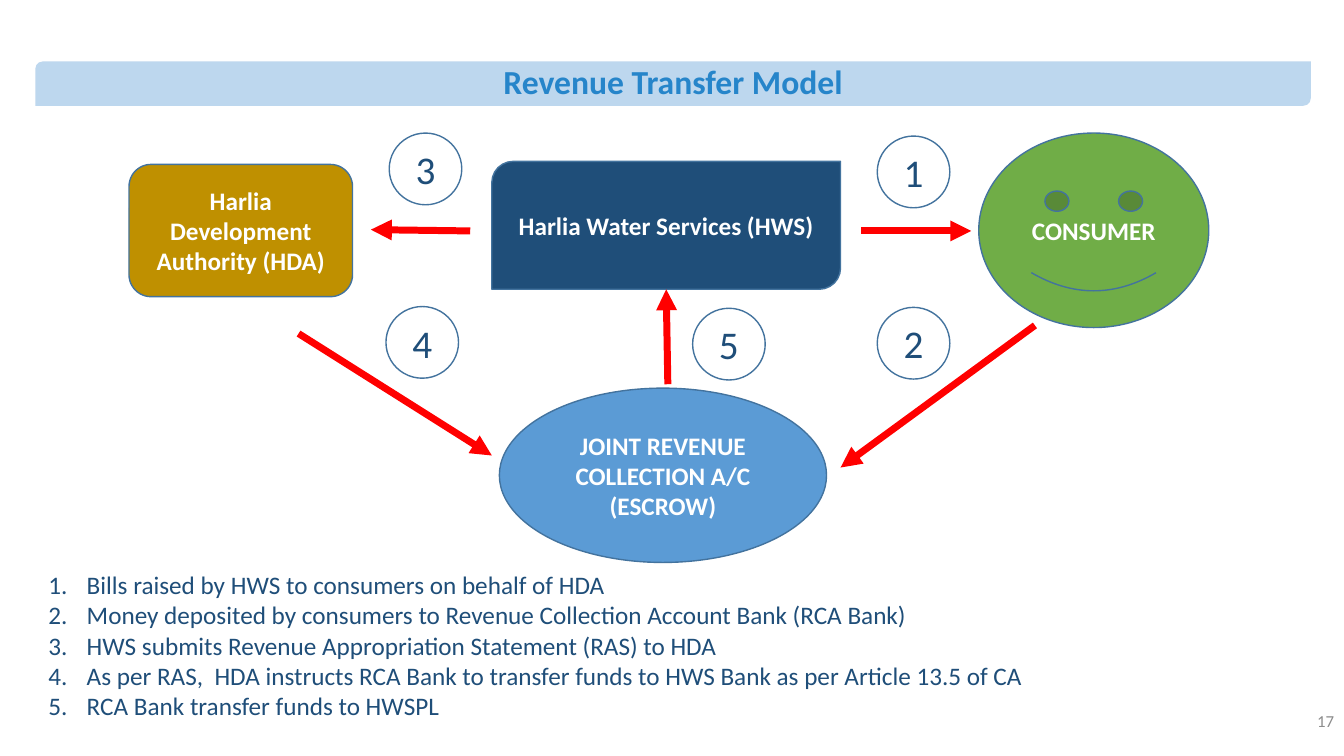
from dataclasses import dataclass

from lxml import etree
from pptx import Presentation
from pptx import util as u
from pptx.dml.color import RGBColor
from pptx.enum import shapes, text
from pptx.oxml.ns import qn

NAVY = RGBColor(0x1F, 0x4E, 0x79)
TITLE_BLUE = RGBColor(0x26, 0x85, 0xCA)
PALE_BLUE = RGBColor(0xBD, 0xD7, 0xEE)
ESCROW_BLUE = RGBColor(0x5B, 0x9B, 0xD5)
OUTLINE = RGBColor(0x43, 0x73, 0x9E)
GOLD = RGBColor(0xBF, 0x90, 0x00)
GREEN = RGBColor(0x70, 0xAD, 0x47)
RED = RGBColor(0xFF, 0x00, 0x00)
GREY = RGBColor(0x8C, 0x8C, 0x8C)
WHITE = RGBColor(0xFF, 0xFF, 0xFF)
FONT = "Calibri"
SHAPE = shapes.MSO_SHAPE
ALIGN = text.PP_ALIGN

PARTIES = [
    ("escrow", SHAPE.OVAL, ESCROW_BLUE, (34.3, 59.4, 30.3, 40.6),
     ["JOINT REVENUE COLLECTION A/C", "(ESCROW)"]),
    ("authority", SHAPE.ROUNDED_RECTANGLE, GOLD, (0, 7.3, 20.7, 30.8),
     ["Harlia Development Authority (HDA)"]),
    ("services", SHAPE.ROUND_2_DIAG_RECTANGLE, NAVY, (33.6, 6.6, 32.3, 29.8),
     ["Harlia Water Services (HWS)"]),
    ("consumer", SHAPE.SMILEY_FACE, GREEN, (78.7, 0, 21.3, 45.3), ["CONSUMER"]),
]
FLOWS = [
    ("1", (69.3, 0.7), (67.8, 22.8), (78, 22.8), None),
    ("2", (69.3, 40.6), (83.9, 44.8), (65.9, 77.9), None),
    ("3", (24.1, 0), (31.6, 22.8), (22.4, 22.5), None),
    ("4", (23.8, 40.4), (15.7, 46.7), (33.6, 75.1), None),
    ("5", (52.2, 40.8), (49.9, 58.5), (49.8, 36.4), "services"),
]
BADGE_SIZE = (6.72, 16.7)
STEPS = [
    "Bills raised by HWS to consumers on behalf of HDA",
    "Money deposited by consumers to Revenue Collection Account Bank (RCA Bank)",
    "HWS submits Revenue Appropriation Statement (RAS) to HDA",
    "As per RAS,  HDA instructs RCA Bank to transfer funds to HWS Bank as per Article 13.5 of CA",
    "RCA Bank transfer funds to HWSPL",
]


@dataclass
class Box:
    left: int
    top: int
    width: int
    height: int

    def point(self, x, y):
        return (int(self.left + self.width * x / 100),
                int(self.top + self.height * y / 100))

    def share(self, x, y, width, height):
        return Box(*self.point(x, y), int(self.width * width / 100),
                   int(self.height * height / 100))

    def frame(self):
        return self.left, self.top, self.width, self.height


def write(frame, lines, size, color, bold=False, align=ALIGN.CENTER):
    frame.word_wrap = True
    frame.vertical_anchor = text.MSO_ANCHOR.MIDDLE
    for index, line in enumerate(lines):
        paragraph = frame.paragraphs[0] if index == 0 else frame.add_paragraph()
        paragraph.alignment = align
        run = paragraph.add_run()
        run.text = line
        run.font.name = FONT
        run.font.size = u.Pt(size)
        run.font.bold = bold
        run.font.color.rgb = color


def add_figure(slide, box, kind, fill=None, outline=OUTLINE):
    shape = slide.shapes.add_shape(kind, *box.frame())
    shape.shadow.inherit = False
    if fill is None:
        shape.fill.background()
    else:
        shape.fill.solid()
        shape.fill.fore_color.rgb = fill
    if outline is None:
        shape.line.fill.background()
    else:
        shape.line.color.rgb = outline
        shape.line.width = u.Pt(1)
    return shape


def add_arrow(slide, start, end, target=None):
    arrow = slide.shapes.add_connector(shapes.MSO_CONNECTOR.STRAIGHT, *start, *end)
    if target is not None:
        arrow.end_connect(target, 2)
    arrow.line.color.rgb = RED
    arrow.line.width = u.Pt(5)
    properties = arrow._element.spPr
    etree.SubElement(properties.find(qn("a:ln")), qn("a:tailEnd"), type="triangle")
    etree.SubElement(properties, qn("a:effectLst"))


def add_title(slide, box):
    banner = add_figure(slide, box, SHAPE.ROUND_2_DIAG_RECTANGLE, PALE_BLUE, None)
    write(banner.text_frame, ["Revenue Transfer Model"], 24, TITLE_BLUE, True)
    banner.text_frame.paragraphs[0].line_spacing = 0.9


def add_flow_diagram(slide, box):
    parties = {}
    for name, kind, fill, place, lines in PARTIES:
        parties[name] = add_figure(slide, box.share(*place), kind, fill)
        write(parties[name].text_frame, lines, 18, WHITE, True)
    for number, corner, start, end, target in FLOWS:
        add_arrow(slide, box.point(*start), box.point(*end), parties.get(target))
        badge = add_figure(slide, box.share(*corner, *BADGE_SIZE), SHAPE.OVAL)
        write(badge.text_frame, [number], 28, NAVY)


def add_steps(slide, box):
    frame = slide.shapes.add_textbox(*box.frame()).text_frame
    write(frame, STEPS, 18, NAVY, align=ALIGN.LEFT)
    frame.vertical_anchor = text.MSO_ANCHOR.TOP
    frame.auto_size = text.MSO_AUTO_SIZE.SHAPE_TO_FIT_TEXT
    frame.margin_left = frame.margin_right = u.Inches(0.13)
    frame.margin_top = frame.margin_bottom = u.Inches(0.07)
    indent = u.Inches(0.38)
    for paragraph in frame.paragraphs:
        properties = paragraph._p.get_or_add_pPr()
        properties.set("marL", str(indent))
        properties.set("indent", str(-indent))
        etree.SubElement(properties, qn("a:buFont"), typeface="+mj-lt")
        etree.SubElement(properties, qn("a:buAutoNum"), type="arabicPeriod")


def add_page_number(slide, box):
    frame = slide.shapes.add_textbox(*box.frame()).text_frame
    write(frame, ["17"], 12, GREY, align=ALIGN.RIGHT)


def main():
    presentation = Presentation()
    presentation.slide_width = u.Inches(13.33)
    presentation.slide_height = u.Inches(7.5)
    slide = presentation.slides.add_slide(presentation.slide_layouts[6])
    page = Box(0, 0, presentation.slide_width, presentation.slide_height)
    add_page_number(slide, page.share(76.67, 92.67, 23.33, 5.33))
    add_steps(slide, page.share(2.63, 74.4, 92.27, 25.6))
    add_flow_diagram(slide, page.share(9.6, 17.6, 80.34, 56.8))
    add_title(slide, page.share(2.63, 8.13, 94.9, 5.87))
    presentation.save("out.pptx")


if __name__ == "__main__":
    main()
